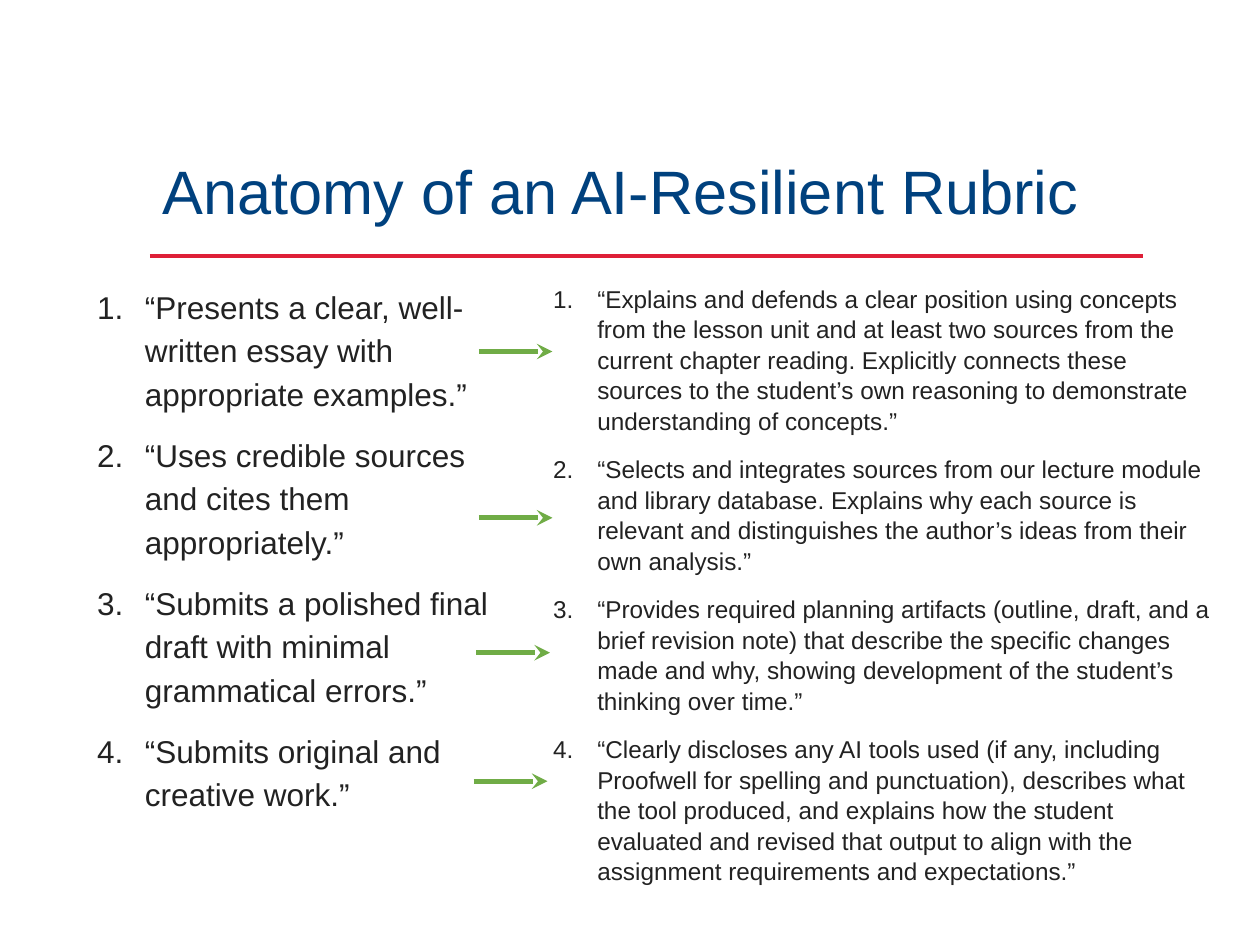
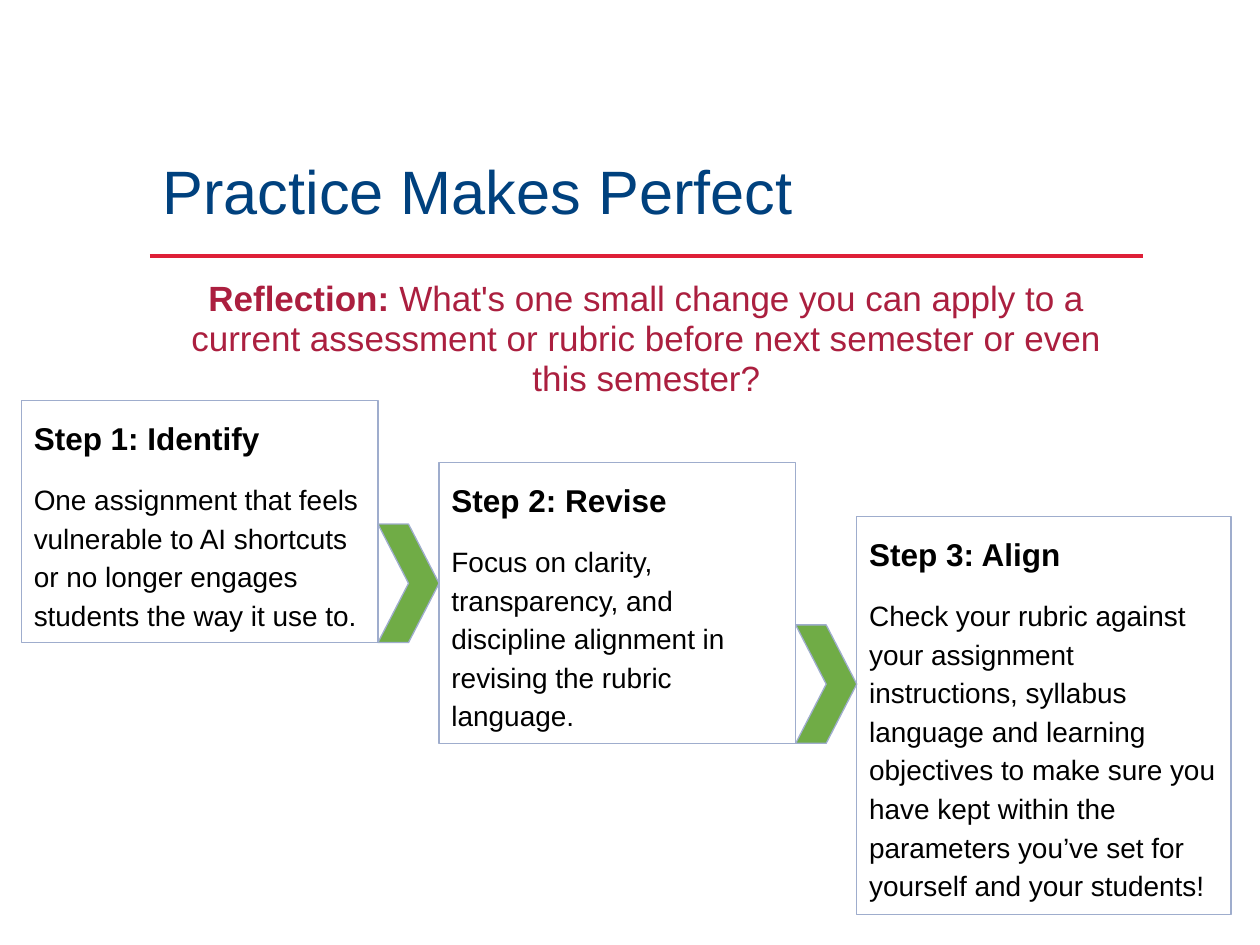
from dataclasses import dataclass

from lxml import etree
from pptx import Presentation
from pptx.dml.color import RGBColor
from pptx.enum.shapes import MSO_CONNECTOR, MSO_SHAPE
from pptx.enum.text import MSO_ANCHOR, MSO_AUTO_SIZE, PP_ALIGN
from pptx.oxml.ns import qn
from pptx.util import Inches, Pt

RECT, CHEVRON = MSO_SHAPE.RECTANGLE, MSO_SHAPE.CHEVRON
STRAIGHT = MSO_CONNECTOR.STRAIGHT
TOP, BOTTOM = MSO_ANCHOR.TOP, MSO_ANCHOR.BOTTOM
LEFT, CENTER = PP_ALIGN.LEFT, PP_ALIGN.CENTER
FIXED, GROW = MSO_AUTO_SIZE.NONE, MSO_AUTO_SIZE.SHAPE_TO_FIT_TEXT
ONE_COLUMN, TWO_COLUMNS = 1, 3  # layouts of the default template
COLS, ROWS = 20, 15             # grid laid over the slide


@dataclass(frozen=True)
class Theme:
    font: str = "Arial"
    title: str = "00417E"
    rule: str = "DE1F37"
    list_text: str = "222222"
    prompt: str = "AB1F3F"
    box_text: str = "000000"
    accent: str = "70AC46"
    outline: str = "9FADCD"
    title_size: float = 35
    prompt_size: float = 20
    heading_size: float = 18
    body_size: float = 16
    detail_size: float = 13.9


class Deck:
    LEFT_EDGE, WIDTH = 2.38, 15.76  # shared by title, rule and prompt

    def __init__(self, prs, theme):
        self.prs, self.theme, self.s = prs, theme, None

    # Grid and text helpers
    def x(self, cols):
        return round(self.prs.slide_width * cols / COLS)

    def y(self, rows):
        return round(self.prs.slide_height * rows / ROWS)

    def place(self, sp, left, top, width, height):
        sp.left, sp.top = self.x(left), self.y(top)
        sp.width, sp.height = self.x(width), self.y(height)

    def frame(self, sp, anchor=TOP, fit=FIXED, inset_y=0.05):
        tf = sp.text_frame
        tf.word_wrap, tf.auto_size, tf.vertical_anchor = True, fit, anchor
        tf.margin_left = tf.margin_right = Inches(0.1)
        tf.margin_top = tf.margin_bottom = Inches(inset_y)
        return tf

    def paragraph(self, tf, runs, size, color, spacing, before=0, after=0,
                  align=LEFT):
        """Fill the empty first paragraph or add one; runs are (text, bold)."""
        first = not tf.paragraphs[0].runs
        p = tf.paragraphs[0] if first else tf.add_paragraph()
        p.alignment, p.line_spacing = align, spacing
        p.space_before, p.space_after = Pt(0 if first else before), Pt(after)
        for text, bold in runs:
            r = p.add_run()
            r.text = text
            r.font.name, r.font.size, r.font.bold = self.theme.font, Pt(size), bold
            r.font.color.rgb = RGBColor.from_string(color)
        return p

    def line(self, start, end, color, width):
        sp = self.s.shapes.add_connector(
            STRAIGHT, self.x(start[0]), self.y(start[1]),
            self.x(end[0]), self.y(end[1]))
        sp.line.color.rgb = RGBColor.from_string(color)
        sp.line.width = Pt(width)
        etree.SubElement(sp._element.spPr, qn("a:effectLst"))
        return sp

    def shape(self, kind, left, top, width, height, fill=None):
        sp = self.s.shapes.add_shape(
            kind, self.x(left), self.y(top), self.x(width), self.y(height))
        sp.shadow.inherit = False
        if fill:
            sp.fill.solid()
            sp.fill.fore_color.rgb = RGBColor.from_string(fill)
        else:
            sp.fill.background()
        sp.line.color.rgb = RGBColor.from_string(self.theme.outline)
        sp.line.width = Pt(0.75)
        return sp

    # Slide elements
    def slide(self, layout, title):
        t = self.theme
        self.s = self.prs.slides.add_slide(self.prs.slide_layouts[layout])
        self.line((self.LEFT_EDGE, 4.06),
                  (self.LEFT_EDGE + self.WIDTH, 4.06), t.rule, 2.5)
        sp = self.s.shapes.title
        self.place(sp, self.LEFT_EDGE, 1.76, self.WIDTH, 1.96)
        self.paragraph(self.frame(sp, BOTTOM), [(title, False)],
                       t.title_size, t.title, 0.9)

    def numbered_list(self, idx, left, width, items, size, spacing, hang):
        sp = self.s.placeholders[idx]
        self.place(sp, left, 4.38, width, 9.82)
        tf = self.frame(sp)
        for item in items:
            p = self.paragraph(tf, [(item, False)], size, self.theme.list_text,
                               spacing, before=10)
            pPr = p._p.get_or_add_pPr()
            pPr.set("marL", str(Inches(0.5)))
            pPr.set("indent", str(-Inches(hang)))
            etree.SubElement(pPr, qn("a:buFont"), typeface="+mj-lt")
            etree.SubElement(pPr, qn("a:buAutoNum"), type="arabicPeriod")

    def prompt(self, label, question):
        t = self.theme
        sp = self.s.placeholders[1]
        self.place(sp, self.LEFT_EDGE, 4.34, self.WIDTH, 3.12)
        p = self.paragraph(self.frame(sp), [(label, True), (question, False)],
                           t.prompt_size, t.prompt, 0.95, align=CENTER)
        pPr = p._p.get_or_add_pPr()
        pPr.set("marL", "0")
        pPr.set("indent", "0")
        etree.SubElement(pPr, qn("a:buNone"))

    def arrow(self, left, row, length=1.17):
        sp = self.line((left, row), (left + length, row), self.theme.accent, 3)
        etree.SubElement(sp.line._get_or_add_ln(), qn("a:tailEnd"), type="stealth")

    def step(self, left, top, width, height, heading, text):
        t = self.theme
        tf = self.frame(self.shape(RECT, left, top, width, height),
                        fit=GROW, inset_y=0.1)
        self.paragraph(tf, [(heading, True)], t.heading_size, t.box_text, 1.15)
        self.paragraph(tf, [(text, False)], t.body_size, t.box_text, 1.15,
                       before=12, after=2)

    def chevron(self, left, bottom, width, height=1.88):
        self.shape(CHEVRON, left, bottom - height, width, height,
                   self.theme.accent)


VAGUE_CRITERIA = [
    "“Presents a clear, well-written essay with appropriate examples.”",
    "“Uses credible sources and cites them appropriately.”",
    "“Submits a polished final draft with minimal grammatical errors.”",
    "“Submits original and creative work.”",
]
RESILIENT_CRITERIA = [
    "“Explains and defends a clear position using concepts from the lesson unit "
    "and at least two sources from the current chapter reading. Explicitly "
    "connects these sources to the student’s own reasoning to demonstrate "
    "understanding of concepts.”",
    "“Selects and integrates sources from our lecture module and library "
    "database. Explains why each source is relevant and distinguishes the "
    "author’s ideas from their own analysis.”",
    "“Provides required planning artifacts (outline, draft, and a brief revision "
    "note) that describe the specific changes made and why, showing development "
    "of the student’s thinking over time.”",
    "“Clearly discloses any AI tools used (if any, including Proofwell for "
    "spelling and punctuation), describes what the tool produced, and explains "
    "how the student evaluated and revised that output to align with the "
    "assignment requirements and expectations.”",
]
ARROWS = [(7.6, 5.58), (7.6, 8.22), (7.56, 10.36), (7.52, 12.4)]
# top, width, height, heading, text
STEPS = [
    (6.36, 5.66, 3.84, "Step 1: Identify",
     "One assignment that feels vulnerable to AI shortcuts or no longer engages "
     "students the way it use to."),
    (7.34, 5.66, 4.46, "Step 2: Revise",
     "Focus on clarity, transparency, and discipline alignment in revising the "
     "rubric language."),
    (8.2, 5.94, 6.32, "Step 3: Align",
     "Check your rubric against your assignment instructions, syllabus language "
     "and learning objectives to make sure you have kept within the parameters "
     "you’ve set for yourself and your students!"),
]
STEP_LEFT, STEP_PITCH = 0.34, 6.63


def rubric_slide(deck):
    t = deck.theme
    deck.slide(TWO_COLUMNS, "Anatomy of an AI-Resilient Rubric")
    deck.numbered_list(1, 1.1, 7.4, VAGUE_CRITERIA, t.heading_size, 1.15, 0.38)
    deck.numbered_list(2, 8.28, 11.26, RESILIENT_CRITERIA, t.detail_size, 1.05, 0.35)
    for left, row in ARROWS:
        deck.arrow(left, row)


def practice_slide(deck):
    deck.slide(ONE_COLUMN, "Practice Makes Perfect")
    deck.prompt("Reflection: ",
                "What's one small change you can apply to a current assessment "
                "or rubric before next semester or even this semester?")
    for i, (top, width, height, heading, text) in enumerate(STEPS):
        left = STEP_LEFT + i * STEP_PITCH
        deck.step(left, top, width, height, heading, text)
        # A chevron fills the gap to the next step
        if i < len(STEPS) - 1:
            deck.chevron(left + width, top + height, STEP_PITCH - width)


def main():
    prs = Presentation()
    prs.slide_width, prs.slide_height = Inches(10), Inches(7.5)
    deck = Deck(prs, Theme())
    rubric_slide(deck)
    practice_slide(deck)
    prs.save("out.pptx")


if __name__ == "__main__":
    main()
